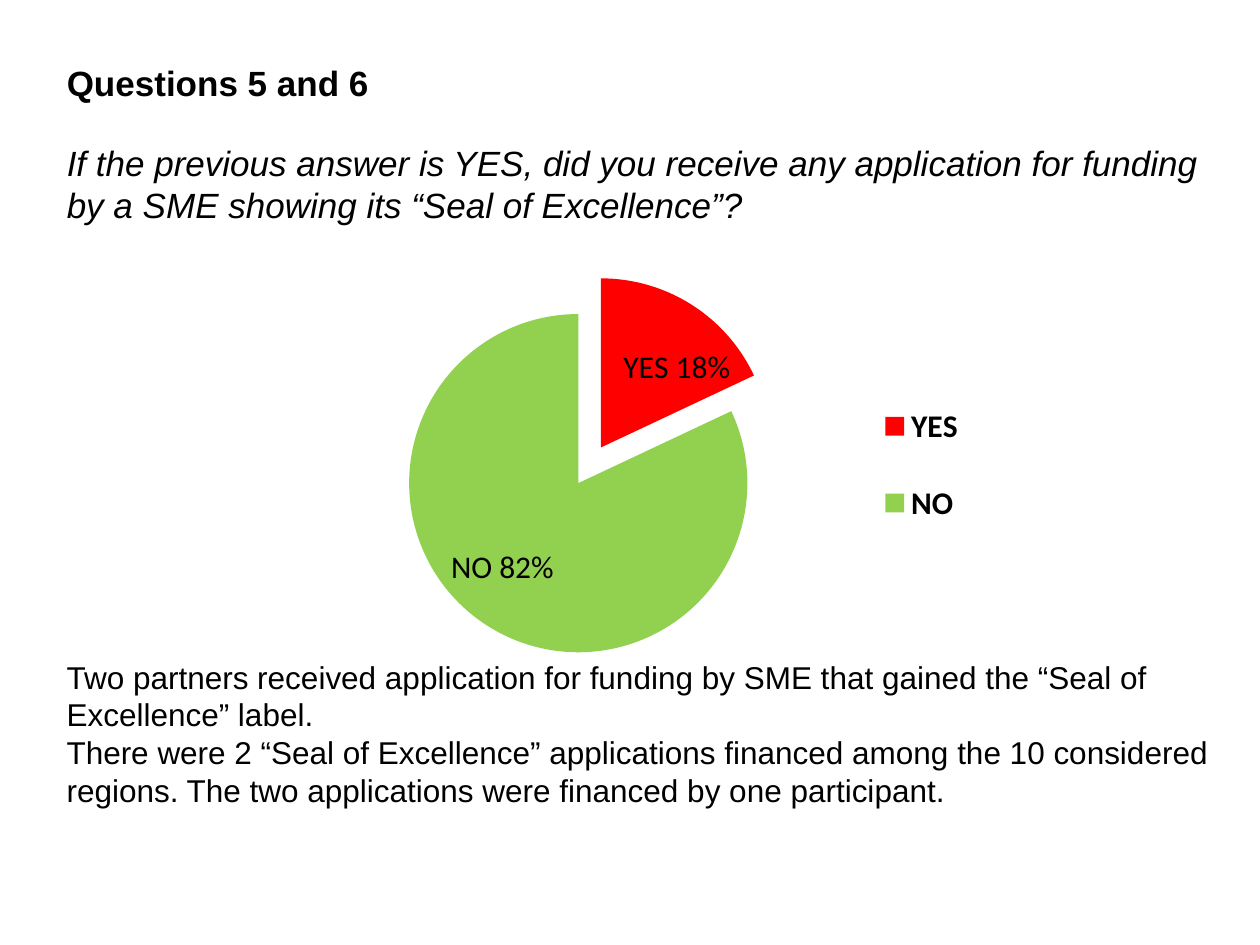
from pptx import Presentation
from pptx.chart.data import CategoryChartData
from pptx.dml.color import RGBColor
from pptx.enum import chart as charts, text
from pptx.oxml import parse_xml
from pptx.oxml.ns import nsdecls, qn
from pptx.util import Inches, Pt

# Content
HEADING = "Questions 5 and 6"
QUESTION = ("If the previous answer is YES, did you receive any application for "
            "funding by a SME showing its “Seal of Excellence”?")
FINDINGS = [
    "Two partners received application for funding by SME that gained the "
    "“Seal of Excellence” label.",
    "There were 2 “Seal of Excellence” applications financed among the 10 "
    "considered regions. The two applications were financed by one participant.",
]
# Answer, share, colour, label shift from the slice centre
ANSWERS = [
    ("YES", 0.18, "FF0000", (0.04, -0.02)),
    ("NO", 0.82, "92D050", (-0.04, 0.03)),
]
EXPLOSION = 25
THEME = {"font": "Arial", "chart_font": "Calibri", "ink": "000000",
         "title_size": 20, "body_size": 18}
LEFT, WIDTH = 0.43, 9.29


def style(font, size, name=THEME["font"], bold=False, italic=False):
    font.name, font.size = name, Pt(size)
    font.bold, font.italic = bold, italic
    font.color.rgb = RGBColor.from_string(THEME["ink"])


def explosion(amount):
    return parse_xml(f'<c:explosion {nsdecls("c")} val="{amount}"/>')


def manual_layout(**values):
    """Chart layout in fractions of the chart area."""
    parts = "".join(f'<c:{key} val="{value}"/>' for key, value in values.items())
    return parse_xml(f'<c:layout {nsdecls("c")}><c:manualLayout>{parts}'
                     '</c:manualLayout></c:layout>')


def set_layout(parent, layout, after=None):
    for old in parent.findall(qn("c:layout")):
        parent.remove(old)
    if after is None:
        parent.insert(0, layout)
    else:
        parent.find(qn(after)).addnext(layout)


def add_heading(page):
    title = page.shapes.title
    title.left, title.top = Inches(LEFT), Inches(0.44)
    title.width, title.height = Inches(WIDTH), Inches(1.41)
    frame = title.text_frame
    frame.vertical_anchor = text.MSO_ANCHOR.TOP
    frame.auto_size = text.MSO_AUTO_SIZE.NONE
    frame.text = f"{HEADING}\n{QUESTION}"
    heading, question = frame.paragraphs
    for para in frame.paragraphs:
        para.alignment = text.PP_ALIGN.LEFT
    question.space_before = Pt(21.5)
    style(heading.runs[0].font, THEME["title_size"], bold=True)
    style(question.runs[0].font, THEME["title_size"], italic=True)


def add_findings(page):
    box = page.shapes.add_textbox(Inches(LEFT), Inches(5.17), Inches(WIDTH), Inches(1.62))
    frame = box.text_frame
    frame.word_wrap = True
    frame.text = "\n".join(FINDINGS)
    for para in frame.paragraphs:
        style(para.runs[0].font, THEME["body_size"])


def add_pie(page):
    data = CategoryChartData(number_format="0%")
    data.categories = [answer[0] for answer in ANSWERS]
    data.add_series("Series 1", [answer[1] for answer in ANSWERS])
    chart = page.shapes.add_chart(
        charts.XL_CHART_TYPE.PIE, Inches(1.77), Inches(1.84),
        Inches(6.06), Inches(3.39), data).chart
    chart.has_title = False
    style(chart.font, 10, THEME["chart_font"])
    plot = chart.plots[0]
    plot.vary_by_categories = True
    series = plot.series[0]

    # Shared label settings
    labels = series.data_labels
    style(labels.font, THEME["body_size"], THEME["chart_font"], bold=True)
    labels.number_format, labels.number_format_is_linked = "0%", False
    labels.show_value = labels.show_category_name = True

    # Slices and their labels
    for index, (name, share, colour, (dx, dy)) in enumerate(ANSWERS):
        point = series.points[index]
        point.format.fill.solid()
        point.format.fill.fore_color.rgb = RGBColor.from_string(colour)
        label = point.data_label
        label.text_frame.text = f"{name} {share:.0%}"
        style(label.text_frame.paragraphs[0].runs[0].font,
              THEME["body_size"], THEME["chart_font"])
        label.position = charts.XL_LABEL_POSITION.CENTER
        label_xml = series._element.findall(f".//{qn('c:dLbl')}")[index]
        label_xml.find(qn("c:showCatName")).set("val", "1")
        set_layout(label_xml, manual_layout(x=dx, y=dy), after="c:idx")

    # The series is pulled apart, the first slice stays in place
    first_slice = series._element.find(qn("c:dPt"))
    first_slice.addprevious(explosion(EXPLOSION))
    first_slice.find(qn("c:spPr")).addprevious(explosion(0))

    # Plot area and legend
    set_layout(chart._chartSpace.chart.plotArea, manual_layout(
        layoutTarget="inner", xMode="edge", yMode="edge", x=0.03, y=0.01, w=0.93, h=0.99))
    chart.has_legend = True
    legend = chart.legend
    legend.position = charts.XL_LEGEND_POSITION.RIGHT
    legend.include_in_layout = False
    style(legend.font, THEME["body_size"], THEME["chart_font"], bold=True)
    set_layout(legend._element, manual_layout(
        xMode="edge", yMode="edge", x=0.85, y=0.32, w=0.13, h=0.45), after="c:legendPos")


def main():
    deck = Presentation()
    deck.slide_width, deck.slide_height = Inches(10), Inches(7.5)
    page = deck.slides.add_slide(deck.slide_layouts.get_by_name("Title Only"))
    add_heading(page)
    add_findings(page)
    add_pie(page)
    deck.save("out.pptx")


if __name__ == "__main__":
    main()
